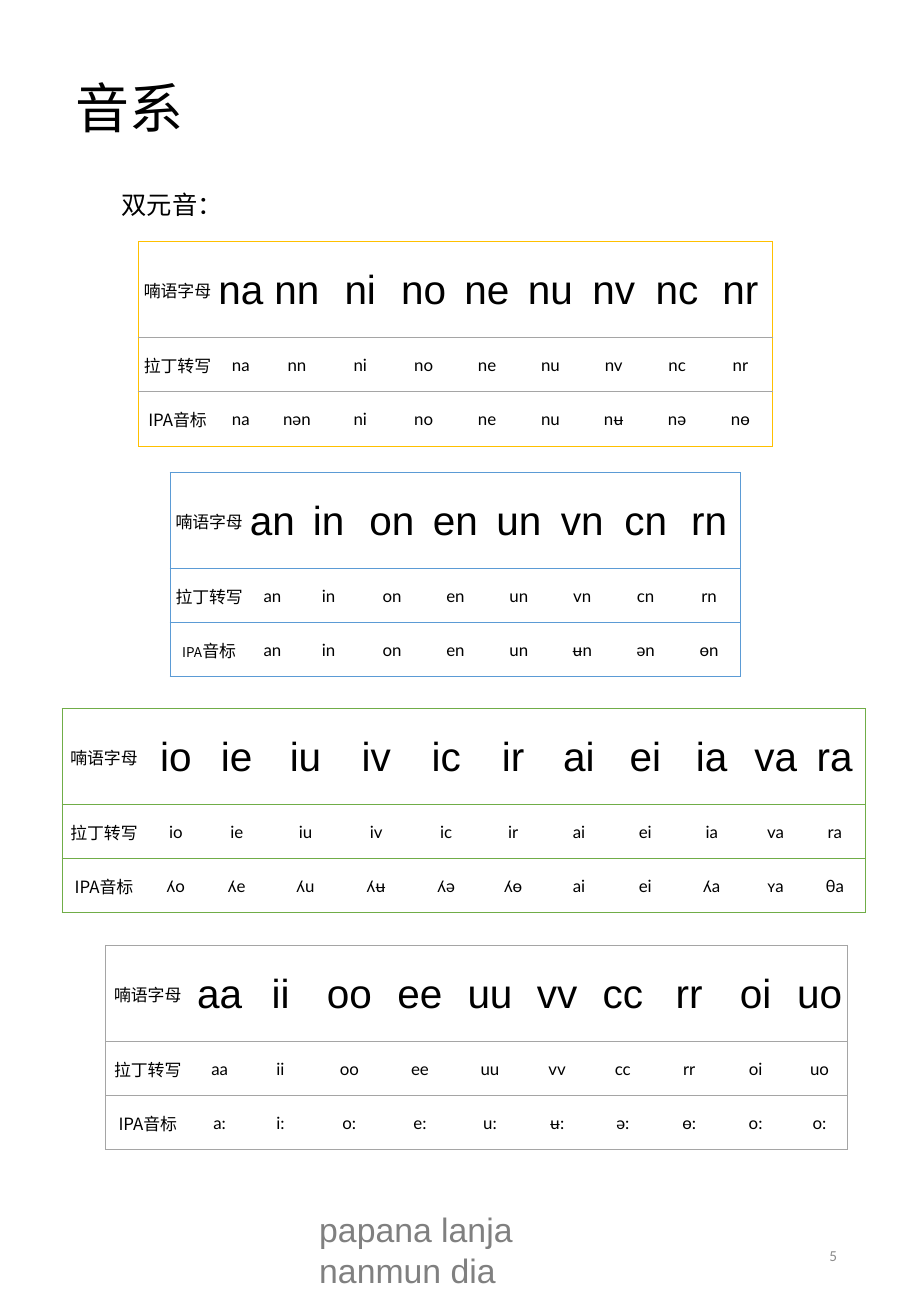
"""Build the phonology slide with its four diphthong tables."""
from lxml.etree import SubElement
from pptx import Presentation
from pptx.dml.color import RGBColor
from pptx.enum.text import MSO_ANCHOR, PP_ALIGN
from pptx.oxml import parse_xml
from pptx.oxml.ns import nsdecls, qn
from pptx.util import Inches, Pt

COLORS = {"black": "000000", "yellow": "FFC000", "blue": "5B9BD5", "green": "70AD47",
          "gray": "A5A5A5", "footer": "808080", "number": "8C8C8C"}
HAN, LETTER, LATIN, NUMBER = "Noto Sans CJK SC", "Arial", "Lato", "Calibri"
SLIDE_WIDTH, SLIDE_HEIGHT = 7.5, 10.83
TABLE_HEIGHT, LETTER_ROW = 1.68, 0.79
EVEN = [0.64, 0.4]
EVEN_STEP = 0.52
UNEVEN = [0.69, 0.49, 0.51, 0.62, 0.54, 0.61, 0.49, 0.59, 0.5, 0.59, 0.46, 0.51]
ROW_LABELS = ["喃语字母", "拉丁转写"]
IPA_LABEL = [("IPA音标", 10)]
SMALL_IPA_LABEL = [("IPA", 8), ("音标", 10)]

TABLES = [
    {"box": (1.14, 1.99, 5.22), "columns": EVEN + [EVEN_STEP] * 8,
     "outer": "yellow", "inner": "gray", "label": IPA_LABEL,
     "letters": "na nn ni no ne nu nv nc nr",
     "ipa": "na nən ni no ne nu nʉ nə nɵ"},
    {"box": (1.4, 3.89, 4.7), "columns": EVEN + [EVEN_STEP] * 7,
     "outer": "blue", "inner": "blue", "label": SMALL_IPA_LABEL,
     "letters": "an in on en un vn cn rn",
     "ipa": "an in on en un ʉn ən ɵn"},
    {"box": (0.51, 5.83, 6.62), "columns": UNEVEN,
     "outer": "green", "inner": "green", "label": IPA_LABEL,
     "letters": "io ie iu iv ic ir ai ei ia va ra",
     "ipa": "ʎo ʎe ʎu ʎʉ ʎə ʎɵ ai ei ʎa ʏa θa"},
    {"box": (0.87, 7.78, 6.11), "columns": UNEVEN[:-1],
     "outer": "gray", "inner": "gray", "label": IPA_LABEL,
     "letters": "aa ii oo ee uu vv cc rr oi uo",
     "ipa": "a: i: o: e: u: ʉ: ə: ɵ: o: o:"},
]

TEXTS = [
    {"text": "音系", "box": (0.52, 0.43, 6.47, 0.96), "size": 32, "font": HAN,
     "color": "black", "anchor": MSO_ANCHOR.MIDDLE, "spacing": 0.9},
    {"text": "双元音：", "box": (0.52, 1.54, 6.47, 8.86), "size": 15, "font": HAN,
     "color": "black", "indent": 0.38, "spacing": 0.9},
    {"text": "5", "box": (5.3, 10.04, 1.69, 0.58), "size": 9, "font": NUMBER,
     "color": "number", "anchor": MSO_ANCHOR.MIDDLE, "align": PP_ALIGN.RIGHT},
    {"text": "papana lanja nanmun dia", "box": (2.53, 9.9, 2.2, 0.44), "size": 20,
     "font": LETTER, "color": "footer"},
]


def format_run(run, size, font, color="black"):
    run.font.size = Pt(size)
    run.font.name = font
    run.font.color.rgb = RGBColor.from_string(COLORS[color])
    if font == HAN:
        east_asian = SubElement(run._r.get_or_add_rPr(), qn("a:ea"))
        east_asian.set("typeface", font)


def add_text(slide, item):
    shape = slide.shapes.add_textbox(*map(Inches, item["box"]))
    frame = shape.text_frame
    frame.word_wrap = True
    frame.vertical_anchor = item.get("anchor", MSO_ANCHOR.TOP)
    frame.margin_left = Inches(0.1 + item.get("indent", 0))
    frame.text = item["text"]
    paragraph = frame.paragraphs[0]
    paragraph.alignment = item.get("align", PP_ALIGN.LEFT)
    paragraph.line_spacing = item.get("spacing", 1.0)
    format_run(paragraph.runs[0], item["size"], item["font"], item["color"])


def set_borders(cell, borders):
    properties = cell._tc.get_or_add_tcPr()
    for position, side in enumerate("LRTB"):
        color = borders.get(side)
        fill = (f'<a:solidFill><a:srgbClr val="{COLORS[color]}"/></a:solidFill>'
                if color else "<a:noFill/>")
        line = parse_xml(f'<a:ln{side} {nsdecls("a")} w="{Pt(0.5)}">{fill}</a:ln{side}>')
        properties.insert(position, line)


def fill_cell(cell, runs, font):
    cell.fill.background()
    cell.vertical_anchor = MSO_ANCHOR.MIDDLE
    cell.margin_left = cell.margin_right = cell.margin_top = Inches(0.01)
    cell.margin_bottom = 0
    paragraph = cell.text_frame.paragraphs[0]
    paragraph.alignment = PP_ALIGN.CENTER
    for text, size in runs:
        run = paragraph.add_run()
        run.text = text
        format_run(run, size, font)


def add_sound_table(slide, item):
    left, top, width = item["box"]
    letters, ipa = item["letters"].split(), item["ipa"].split()
    small_row = (TABLE_HEIGHT - LETTER_ROW) / 2
    heights = [LETTER_ROW, small_row, small_row]
    labels = [[(label, 10)] for label in ROW_LABELS] + [item["label"]]
    rows = list(zip(labels, [letters, letters, ipa], [24, 10, 10], [LETTER, LATIN, LATIN]))
    columns = item["columns"]
    frame = slide.shapes.add_table(len(rows), len(columns), Inches(left), Inches(top),
                                   Inches(width), Inches(TABLE_HEIGHT))
    table = frame.table
    table.first_row = table.horz_banding = False
    for column, share in zip(table.columns, columns):
        column.width = Inches(width * share / sum(columns))
    last_row, last_column = len(rows) - 1, len(columns) - 1
    for row_index, (label, sounds, size, font) in enumerate(rows):
        table.rows[row_index].height = Inches(heights[row_index])
        for column_index in range(len(columns)):
            cell = table.cell(row_index, column_index)
            if column_index == 0:
                fill_cell(cell, label, HAN)
            else:
                fill_cell(cell, [(sounds[column_index - 1], size)], font)
            set_borders(cell, {
                "L": item["outer"] if column_index == 0 else None,
                "R": item["outer"] if column_index == last_column else None,
                "T": item["outer"] if row_index == 0 else item["inner"],
                "B": item["outer"] if row_index == last_row else item["inner"],
            })


def main():
    presentation = Presentation()
    presentation.slide_width = Inches(SLIDE_WIDTH)
    presentation.slide_height = Inches(SLIDE_HEIGHT)
    slide = presentation.slides.add_slide(presentation.slide_layouts[6])
    for item in TEXTS:
        add_text(slide, item)
    for item in TABLES:
        add_sound_table(slide, item)
    presentation.save("out.pptx")


if __name__ == "__main__":
    main()
